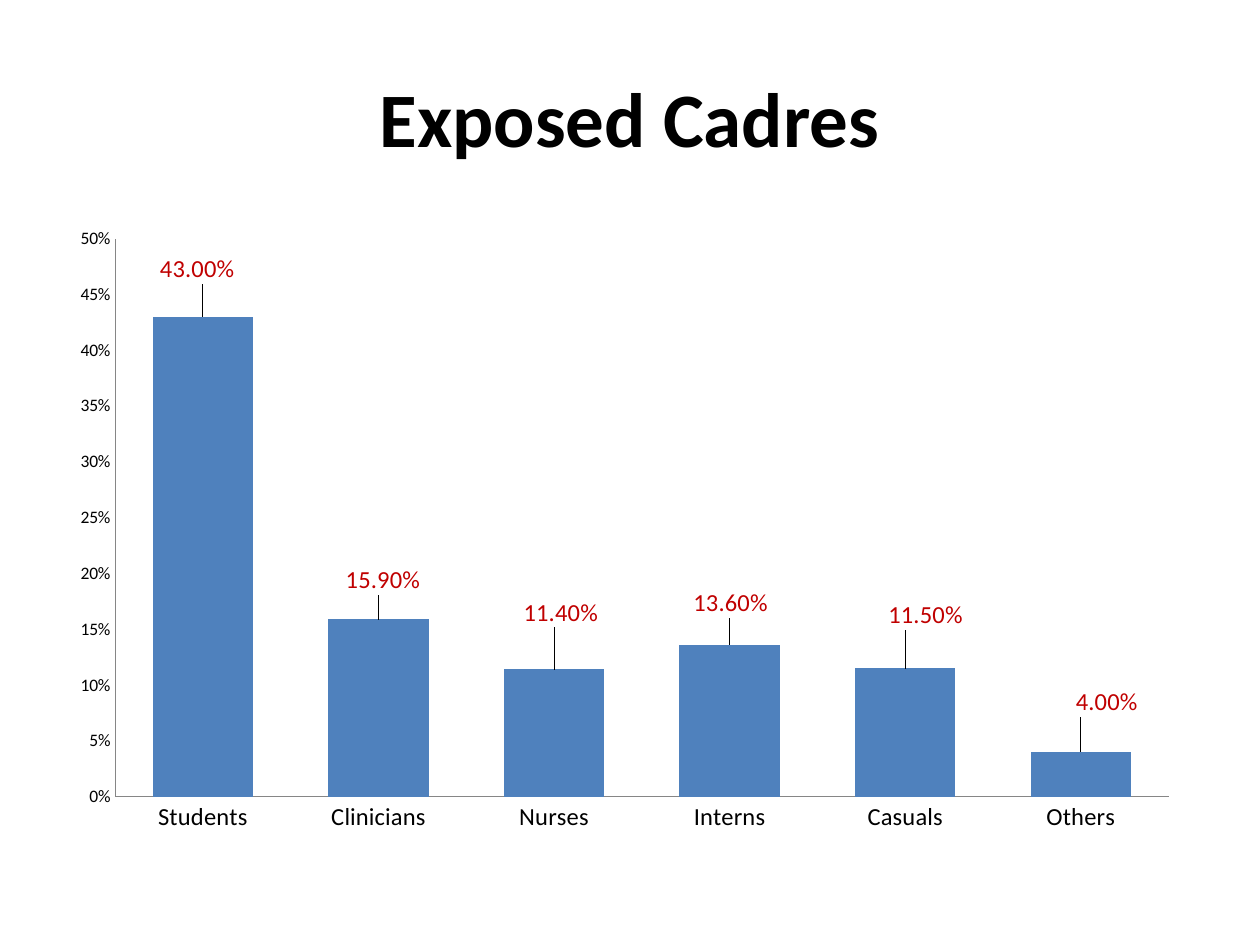
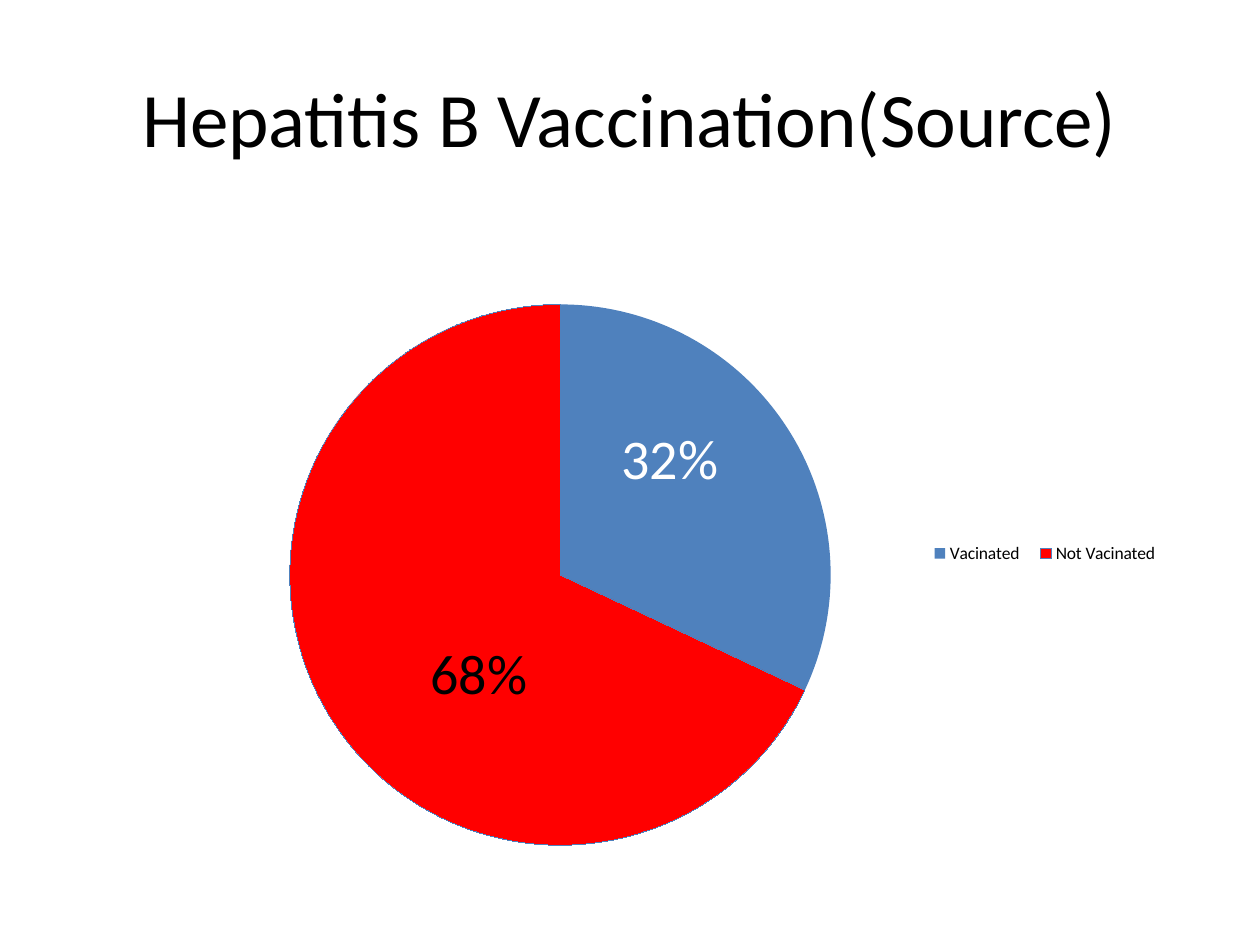
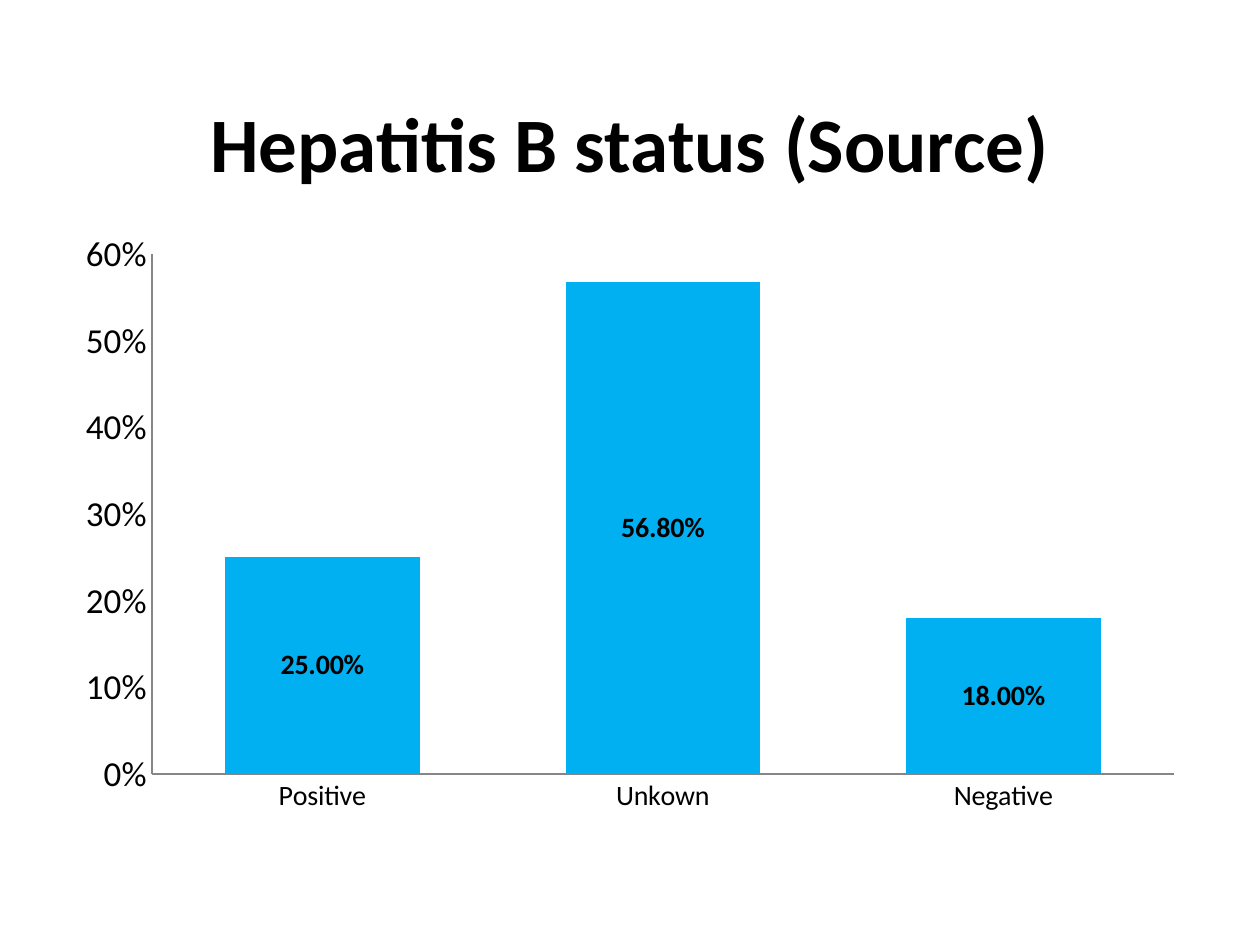
from pptx import Presentation
from pptx.chart.data import CategoryChartData
from pptx.dml.color import RGBColor
from pptx.enum.chart import XL_CHART_TYPE, XL_LABEL_POSITION, XL_LEGEND_POSITION, XL_TICK_MARK
from pptx.enum.text import MSO_ANCHOR, PP_ALIGN
from pptx.oxml import parse_xml
from pptx.oxml.ns import nsdecls
from pptx.util import Inches, Pt

BLACK = RGBColor(0, 0, 0)
WHITE = RGBColor(255, 255, 255)
BLUE = RGBColor(0x4F, 0x81, 0xBD)
RED = RGBColor(255, 0, 0)
CRIMSON = RGBColor(0xC0, 0, 0)
SKY = RGBColor(0, 0xB0, 0xF0)
GRAY = RGBColor(0x86, 0x86, 0x86)
FONT = "Calibri"
LEFT, WIDTH = 0.5, 9

deck = Presentation()
deck.slide_width, deck.slide_height = Inches(10), Inches(7.5)


def style(font, **values):
    color = values.pop("color", BLACK)
    for name, value in {"name": FONT, **values}.items():
        setattr(font, name, value)
    font.color.rgb = color


def put_layout(parent, index, shares, **modes):
    """Place a chart part; shares (x, y, w, h) are percent of the chart's size."""
    for old in parent.xpath("c:layout"):
        parent.remove(old)
    values = {**modes, **{key: share / 100 for key, share in zip("xywh", shares)}}
    items = "".join(f'<c:{key} val="{value}"/>' for key, value in values.items())
    parent.insert(index, parse_xml(
        f'<c:layout {nsdecls("c")}><c:manualLayout>{items}</c:manualLayout></c:layout>'))


COLUMN, STACK, PIE = (XL_CHART_TYPE.COLUMN_CLUSTERED, XL_CHART_TYPE.COLUMN_STACKED,
                      XL_CHART_TYPE.PIE)
ABOVE, MIDDLE = XL_LABEL_POSITION.OUTSIDE_END, XL_LABEL_POSITION.CENTER
EDGE = {"xMode": "edge", "yMode": "edge"}
NO_LEADERS = (f'<c:extLst {nsdecls("c")}><c:ext uri="{{CE6537A1-D6FC-4f65-9D91-7224C49458BB}}" '
              'xmlns:c15="http://schemas.microsoft.com/office/drawing/2012/chart">'
              '<c15:showLeaderLines val="0"/></c:ext></c:extLst>')

# Plot places and label shifts are in percent of the chart's size
pages = [
    {"title": "Exposed Cadres", "bold": True, "top": 0.3, "kind": COLUMN,
     "box": (1.75, 4.95), "plot": (4.6, 2.9, 92.9, 89.5),
     "data": {"Students": 0.43, "Clinicians": 0.159, "Nurses": 0.114,
              "Interns": 0.136, "Casuals": 0.115, "Others": 0.04},
     "fill": BLUE, "sizes": (14, 10), "step": (0.5, 0.05), "spot": ABOVE,
     "label": {"size": Pt(14), "color": CRIMSON}, "form": "0.00%",
     "shifts": {0: (-0.5, -4.4), 1: (0.4, -3), 2: (0.6, -5.9),
                3: (0.1, -3.5), 4: (1.8, -5.3), 5: (2.3, -4.8)}},
    {"title": "Hepatitis B Vaccination(Source)", "bold": False, "top": 0.3, "kind": PIE,
     "box": (2.17, 4.8), "plot": (20, 5.1, 47.7, 89.5),
     "data": {"Hepatitis B Vacination (Source)": None, "Vacinated": 32,
              "Not Vacinated ": 68},
     "spot": MIDDLE, "label": {"size": Pt(32)}, "form": "0%",
     "shifts": {1: (-0.4, -7), 2: (2.9, 4.7)}},
    {"title": "Hepatitis B status (Source)", "bold": True, "top": 0.5, "kind": STACK,
     "box": (1.75, 4.8), "plot": (7.85, 5.55, 90.1, 86),
     "data": {"Positive": 0.25, "Unkown": 0.568, "Negative": 0.18},
     "fill": SKY, "sizes": (16, 20), "step": (0.6, 0.1), "spot": MIDDLE,
     "label": {"size": Pt(16), "bold": True}, "form": "0.00%", "shifts": {}},
]

for page in pages:
    # Title
    slide = deck.slides.add_slide(deck.slide_layouts[5])
    title = slide.shapes.title
    title.left, title.top = Inches(LEFT), Inches(page["top"])
    title.width, title.height = Inches(WIDTH), Inches(1.25)
    frame = title.text_frame
    frame.text = page["title"]
    frame.vertical_anchor = MSO_ANCHOR.MIDDLE
    line = frame.paragraphs[0]
    line.alignment = PP_ALIGN.CENTER
    style(line.runs[0].font, size=Pt(44), bold=page["bold"])

    # Chart
    data = CategoryChartData(number_format="General" if page["kind"] == PIE else "0.00%")
    data.categories = list(page["data"])
    data.add_series("Series 1", list(page["data"].values()))
    top, height = page["box"]
    chart = slide.shapes.add_chart(page["kind"], Inches(LEFT), Inches(top),
                                   Inches(WIDTH), Inches(height), data).chart
    style(chart.font, size=Pt(10))
    chart.has_title = False
    chart.has_legend = page["kind"] == PIE
    area = chart._chartSpace.xpath(".//c:plotArea")[0]
    put_layout(area, 0, page["plot"], layoutTarget="inner", **EDGE)
    plot = chart.plots[0]
    plot.vary_by_categories = page["kind"] == PIE
    series = plot.series[0]

    # Labels
    labels = series.data_labels
    style(labels.font, **page["label"])
    labels.position = page["spot"]
    labels.number_format = page["form"]
    labels.number_format_is_linked = False
    labels.show_percentage = page["kind"] == PIE
    labels.show_value = page["kind"] != PIE
    for spot, shift in page["shifts"].items():
        label = series.points[spot].data_label
        style(label.font, **page["label"])
        label.position = page["spot"]
        node = series._element.xpath(f'.//c:dLbl[c:idx/@val="{spot}"]')[0]
        put_layout(node, 1, shift)
        node.insert(2, parse_xml(f'<c:numFmt {nsdecls("c")} formatCode="{page["form"]}" '
                                 'sourceLinked="0"/>'))
        if page["kind"] == PIE:
            node.xpath("c:showVal")[0].set("val", "0")
            node.xpath("c:showPercent")[0].set("val", "1")

    if page["kind"] == PIE:
        # Slices
        for spot, color in enumerate((BLUE, BLUE, RED)):
            part = series.points[spot].format
            part.fill.solid()
            part.fill.fore_color.rgb = color
        part.line.color.rgb = BLUE
        series.points[1].data_label.font.color.rgb = WHITE

        # Legend without its first entry
        legend = chart.legend
        legend.position = XL_LEGEND_POSITION.RIGHT
        legend.include_in_layout = False
        style(legend.font, size=Pt(10))
        node = legend._element
        node.insert(1, parse_xml(f'<c:legendEntry {nsdecls("c")}><c:idx val="0"/>'
                                 '<c:delete val="1"/></c:legendEntry>'))
        put_layout(node, 2, (75.5, 43.8, 22.5, 5), **EDGE)
        continue

    # Columns and axes
    series._element.xpath("c:dLbls")[0].append(parse_xml(NO_LEADERS))
    plot.gap_width = 75
    plot.overlap = 100 if page["kind"] == STACK else 0
    series.format.fill.solid()
    series.format.fill.fore_color.rgb = page["fill"]
    for axis, size in zip((chart.category_axis, chart.value_axis), page["sizes"]):
        axis.has_major_gridlines = False
        axis.major_tick_mark = axis.minor_tick_mark = XL_TICK_MARK.NONE
        axis.format.line.color.rgb = GRAY
        axis.format.line.width = Pt(0.75)
        style(axis.tick_labels.font, size=Pt(size))
    scale = chart.value_axis
    scale.minimum_scale = 0
    scale.maximum_scale, scale.major_unit = page["step"]
    scale.tick_labels.number_format = "0%"
    scale.tick_labels.number_format_is_linked = False

deck.save("out.pptx")
